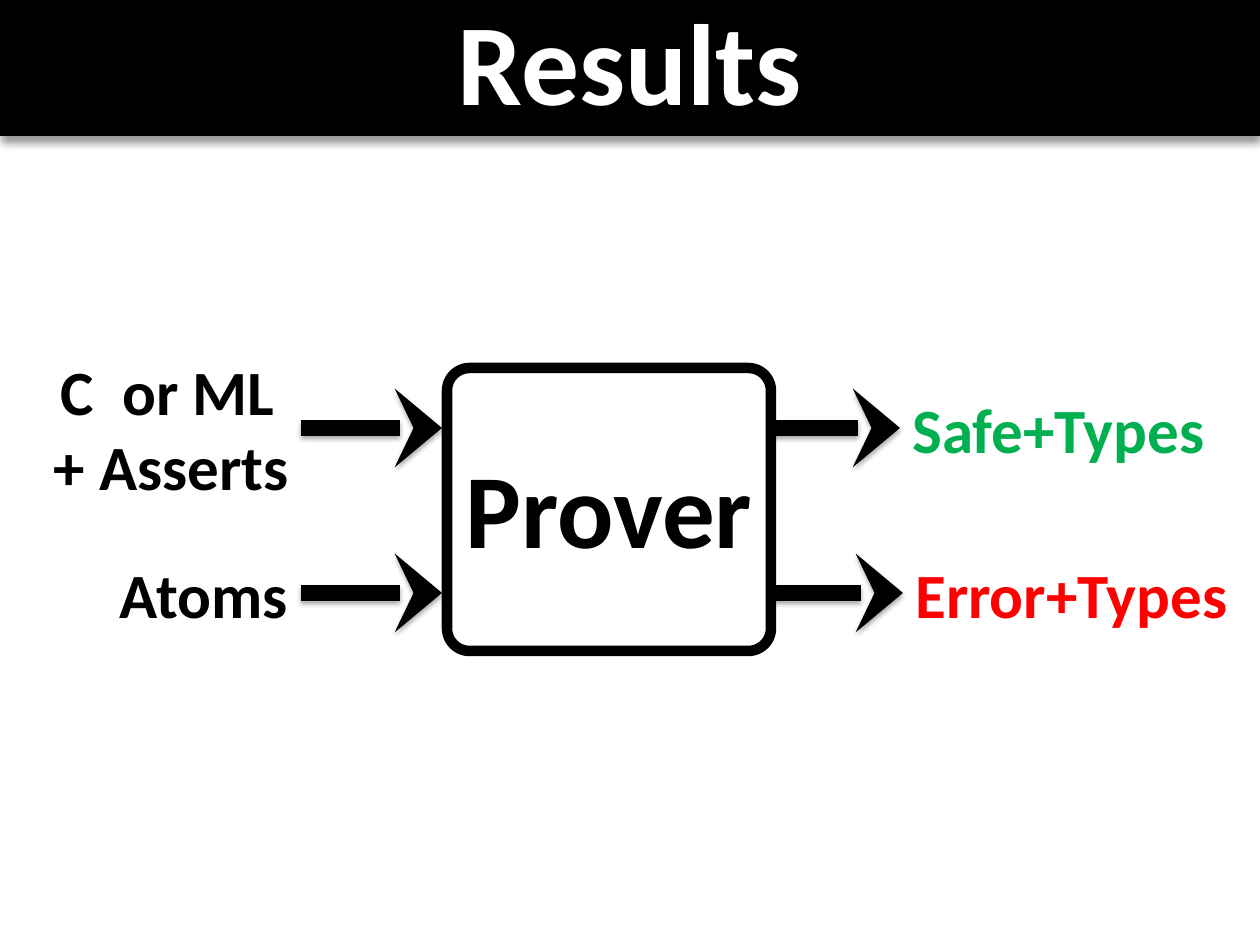
from lxml import etree
from pptx import Presentation, util as u
from pptx.dml.color import RGBColor
from pptx.enum import shapes, text
from pptx.oxml import ns

PX = 914400 // 126
FONT = "Calibri"
COLORS = {"ink": "000000", "paper": "FFFFFF", "safe": "00B050", "error": "FF0000"}
ALIGN = text.PP_ALIGN
ANCHOR = text.MSO_ANCHOR


def px(*lengths):
    return [u.Emu(n * PX) for n in lengths]


def rgb(name):
    return RGBColor.from_string(COLORS[name])


def sub(parent, tag, **attrs):
    return etree.SubElement(parent, ns.qn(tag), {k: str(v) for k, v in attrs.items()})


def add_shadow(sp, alpha, blur, dist):
    """Cast a shadow straight down; alpha in percent, blur and dist in points."""
    effects = sub(sp._element.spPr, "a:effectLst")
    shadow = sub(effects, "a:outerShdw", blurRad=u.Pt(blur), dist=u.Pt(dist),
                 dir=90 * 60000, rotWithShape=0)
    color = sub(shadow, "a:srgbClr", val=COLORS["ink"])
    sub(color, "a:alpha", val=alpha * 1000)


def write(sp, content, size=36, color="ink", align=ALIGN.LEFT,
          anchor=ANCHOR.TOP, wrap=True):
    tf = sp.text_frame
    tf.word_wrap = wrap
    tf.vertical_anchor = anchor
    for i, line in enumerate(content.split("\n")):
        p = tf.paragraphs[0] if i == 0 else tf.add_paragraph()
        p.alignment = align
        r = p.add_run()
        r.text = line
        r.font.name, r.font.size, r.font.bold = FONT, u.Pt(size), True
        r.font.color.rgb = rgb(color)


def add_label(s, box, content, **fmt):
    write(s.shapes.add_textbox(*px(*box)), content, **fmt)


def add_box(s, kind, box, fill):
    sp = s.shapes.add_shape(kind, *px(*box))
    sp.fill.solid()
    sp.fill.fore_color.rgb = rgb(fill)
    sp.line.fill.background()
    return sp


def add_arrow(s, x1, x2, y):
    c = s.shapes.add_connector(shapes.MSO_CONNECTOR.STRAIGHT, *px(x1, y, x2, y))
    c.line.color.rgb = rgb("ink")
    c.line.width = u.Pt(9)
    sub(c.line._get_or_add_ln(), "a:tailEnd", type="stealth", w="lg")
    add_shadow(c, alpha=35, blur=3.1, dist=1.8)


def add_header(s, x, y, w, h):
    bar = add_box(s, shapes.MSO_SHAPE.RECTANGLE, (x, y, w, h), "ink")
    add_shadow(bar, alpha=40, blur=4, dist=4)
    add_label(s, (x + 63, y - 19, w - 126, h + 21), "Results", size=66,
              color="paper", align=ALIGN.CENTER, anchor=ANCHOR.MIDDLE)


def add_solver(s, x, y, w, h):
    sp = add_box(s, shapes.MSO_SHAPE.ROUNDED_RECTANGLE, (x, y, w, h), "paper")
    sp.adjustments[0] = 0.08
    sp.line.color.rgb = rgb("ink")
    sp.line.width = u.Pt(6)
    sp.shadow.inherit = False
    sp.text_frame.margin_top = 0
    write(sp, "Prover", size=60, align=ALIGN.CENTER, anchor=ANCHOR.MIDDLE, wrap=False)


def add_flow(s, x, y, w, h):
    """Solver box in the middle, inputs on its left and outputs on its right."""
    top, bottom = y + 60, y + 225
    label_h, rise = 89, 44
    box_x, box_w = x + 456, 324
    in_x, in_end = x + 310, box_x - 5
    out_x = box_x + box_w

    add_label(s, (x, y - 22, 310, 165), "C  or ML \n+ Asserts", align=ALIGN.RIGHT)
    add_label(s, (x + 73, bottom - rise, 236, label_h), "Atoms", align=ALIGN.RIGHT)
    for row, end, content, color in ((top, x + 909, "Safe+Types", "safe"),
                                     (bottom, x + 912, "Error+Types", "error")):
        add_arrow(s, out_x - 6, end, row)
        add_label(s, (end, row - rise, x + w - end, label_h), content,
                  color=color, wrap=False)
    add_solver(s, box_x, y, box_w, h)
    for row in (top, bottom):
        add_arrow(s, in_x, in_end, row)


def main():
    prs = Presentation()
    prs.slide_width, prs.slide_height = px(1260, 945)
    s = prs.slides.add_slide(prs.slide_layouts[6])
    add_header(s, 0, 0, 1260, 136)
    add_flow(s, -9, 368, 1253, 283)
    prs.save("out.pptx")


if __name__ == "__main__":
    main()
